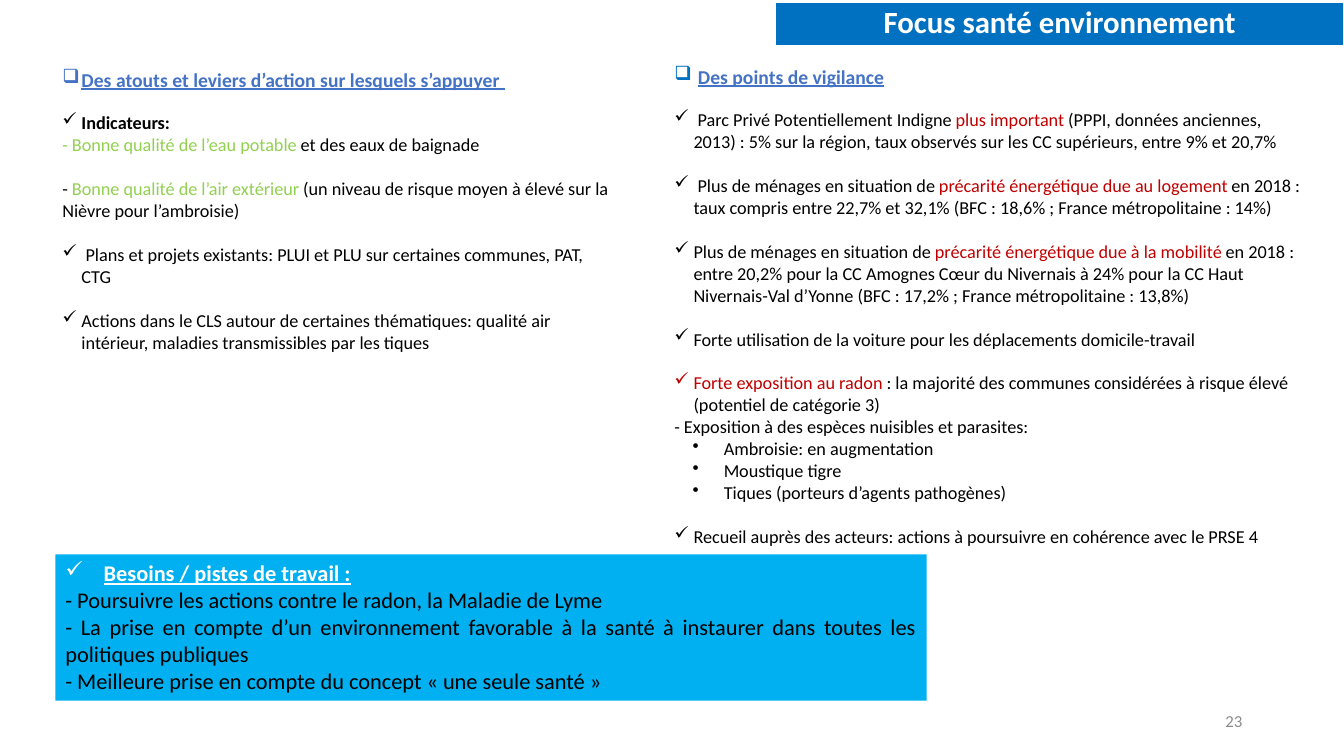
from lxml import etree
from pptx import Presentation
from pptx.dml.color import RGBColor
from pptx.enum.shapes import MSO_SHAPE
from pptx.enum.text import MSO_ANCHOR, PP_ALIGN
from pptx.oxml.ns import qn
from pptx.util import Inches, Pt

RECTANGLE = MSO_SHAPE.RECTANGLE
MIDDLE, TOP = MSO_ANCHOR.MIDDLE, MSO_ANCHOR.TOP
LEFT, CENTER, RIGHT, JUSTIFY = PP_ALIGN.LEFT, PP_ALIGN.CENTER, PP_ALIGN.RIGHT, PP_ALIGN.JUSTIFY
FONT = "Calibri"
COLORS = {
    "black": "000000", "white": "FFFFFF", "grey": "8C8C8C", "red": "C00000", "green": "92D050",
    "heading": "4472C4", "banner": "0070C0", "needs": "00B0F0",
}
BULLETS = {
    "box": ("❑", 0.19, 0.19),
    "check": ("✓", 0.19, 0.19),
    "dot": ("•", 0.49, 0.31),
    "wide": ("✓", 0.38, 0.38),
}
HEADING_GAP, ITEM_GAP = 14.6, 15.8

STRENGTHS = [
    ("check", 0, [("Indicateurs:", "black")]),
    (None, 0, [("- Bonne qualité de l’eau potable ", "green"), ("et des eaux de baignade", "black")]),
    (None, ITEM_GAP, [("- ", "black"), ("Bonne qualité de l’air extérieur ", "green"),
                      ("(un niveau de risque moyen à élevé sur la Nièvre pour l’ambroisie)", "black")]),
    ("check", ITEM_GAP, [(" Plans et projets existants: PLUI et PLU sur certaines communes, PAT, CTG", "black")]),
    ("check", ITEM_GAP, [("Actions dans le CLS autour de certaines thématiques: qualité air intérieur, "
                          "maladies transmissibles par les tiques", "black")]),
]
CONCERNS = [
    ("check", 0, [(" Parc Privé Potentiellement Indigne ", "black"), ("plus important ", "red"),
                  ("(PPPI, données anciennes, 2013) : 5% sur la région, taux observés sur les CC "
                   "supérieurs, entre 9% et 20,7%", "black")]),
    ("check", ITEM_GAP, [(" Plus de ménages en situation de ", "black"),
                         ("précarité énergétique due au logement ", "red"),
                         ("en 2018 : taux compris entre 22,7% et 32,1% (BFC : 18,6% ; "
                          "France métropolitaine : 14%)", "black")]),
    ("check", ITEM_GAP, [("Plus de ménages en situation de ", "black"),
                         ("précarité énergétique due à la mobilité ", "red"),
                         ("en 2018 : entre 20,2% pour la CC Amognes Cœur du Nivernais à 24% pour la CC "
                          "Haut Nivernais-Val d’Yonne (BFC : 17,2% ; France métropolitaine : 13,8%)", "black")]),
    ("check", ITEM_GAP, [("Forte utilisation de la voiture pour les déplacements domicile-travail", "black")]),
    ("check", ITEM_GAP, [("Forte exposition au radon ", "red"),
                         (": la majorité des communes considérées à risque élevé "
                          "(potentiel de catégorie 3)", "black")]),
    (None, 0, [("- Exposition à des espèces nuisibles et parasites:", "black")]),
    ("dot", 0, [("Ambroisie: en augmentation", "black")]),
    ("dot", 0, [("Moustique tigre", "black")]),
    ("dot", 0, [("Tiques (porteurs d’agents pathogènes)", "black")]),
    ("check", ITEM_GAP, [("Recueil auprès des acteurs: actions à poursuivre en cohérence avec le PRSE 4", "black")]),
]
NEEDS = [
    "- Poursuivre les actions contre le radon, la Maladie de Lyme",
    "- La prise en compte d’un environnement favorable à la santé à instaurer dans toutes les politiques publiques",
    "- Meilleure prise en compte du concept « une seule santé » ",
]


def rgb(name):
    """Return the named colour."""
    return RGBColor.from_string(COLORS[name])


def add_area(slide, box, fill=None, line=None, anchor=TOP):
    """Add a text area, on a filled rectangle if a fill is given, and return its frame."""
    left, top, width, height = map(Inches, box)
    if fill:
        area = slide.shapes.add_shape(RECTANGLE, left, top, width, height)
        area.shadow.inherit = False
        area.fill.solid()
        area.fill.fore_color.rgb = rgb(fill)
        if line:
            area.line.color.rgb = rgb(line)
            area.line.width = Pt(1)
        else:
            area.line.fill.background()
    else:
        area = slide.shapes.add_textbox(left, top, width, height)
    frame = area.text_frame
    frame.word_wrap = True
    frame.vertical_anchor = anchor
    return frame


def add_bullet(paragraph, bullet):
    """Give the paragraph a bullet with its hanging indent."""
    symbol, margin, hanging = BULLETS[bullet]
    properties = paragraph._p.get_or_add_pPr()
    properties.set("marL", str(Inches(margin)))
    properties.set("indent", str(-Inches(hanging)))
    etree.SubElement(properties, qn("a:buChar")).set("char", symbol)


def add_line(frame, runs, size, bullet=None, gap=0, align=LEFT, bold=False, underline=False):
    """Write a paragraph of coloured runs, using the first one if still empty."""
    paragraph = frame.paragraphs[0] if not frame.text else frame.add_paragraph()
    if bullet:
        add_bullet(paragraph, bullet)
    paragraph.alignment = align
    paragraph.space_before = Pt(gap)
    paragraph.font.name = FONT
    paragraph.font.size = Pt(size)
    paragraph.font.bold = bold
    paragraph.font.underline = underline
    if len({color for _, color in runs}) == 1:
        paragraph.font.color.rgb = rgb(runs[0][1])
    for text, color in runs:
        run = paragraph.add_run()
        run.text = text
        if len(runs) > 1:
            run.font.color.rgb = rgb(color)
    return paragraph


def add_banner(slide, box, title):
    """Draw the title banner."""
    frame = add_area(slide, box, "banner", "white", MIDDLE)
    add_line(frame, [(title, "white")], 22, align=CENTER, bold=True).line_spacing = 0.9


def add_findings(slide, box, heading, findings, fill=None):
    """Draw a column with an underlined heading and its findings."""
    frame = add_area(slide, box, fill)
    title = add_line(frame, heading, 14, "box", bold=True, underline=True)
    title.space_after = Pt(HEADING_GAP)
    if not heading[0][0].strip():
        title.runs[0].font.underline = False
    for bullet, gap, runs in findings:
        is_label = runs[0][0] == "Indicateurs:"
        add_line(frame, runs, 13, bullet, gap, bold=is_label)


def add_needs(slide, box, heading, needs):
    """Draw the box of needs and lines of work."""
    frame = add_area(slide, box, "needs")
    add_line(frame, [(heading, "white")], 16, "wide", align=JUSTIFY, bold=True, underline=True)
    for need in needs:
        add_line(frame, [(need, "black")], 16, align=JUSTIFY)


def add_page_number(slide, box, number):
    """Write the page number."""
    frame = add_area(slide, box, anchor=MIDDLE)
    add_line(frame, [(number, "grey")], 12, align=RIGHT)


def main():
    """Build and save the slide."""
    deck = Presentation()
    deck.slide_width, deck.slide_height = Inches(13.33), Inches(7.5)
    slide = deck.slides.add_slide(deck.slide_layouts[6])
    add_page_number(slide, (9.42, 6.95, 3, 0.4), "23")
    add_findings(slide, (6.59, 0.59, 6.46, 4.91),
                 [(" ", "banner"), ("Des points de vigilance", "heading")], CONCERNS, "white")
    add_findings(slide, (0.52, 0.62, 5.67, 2.95),
                 [("Des atouts et leviers d’action sur lesquels s’appuyer ", "heading")], STRENGTHS)
    add_banner(slide, (7.69, 0.02, 5.64, 0.43), "Focus santé environnement")
    add_needs(slide, (0.55, 5.5, 8.64, 1.45), "Besoins / pistes de travail :", NEEDS)
    deck.save("out.pptx")


if __name__ == "__main__":
    main()
